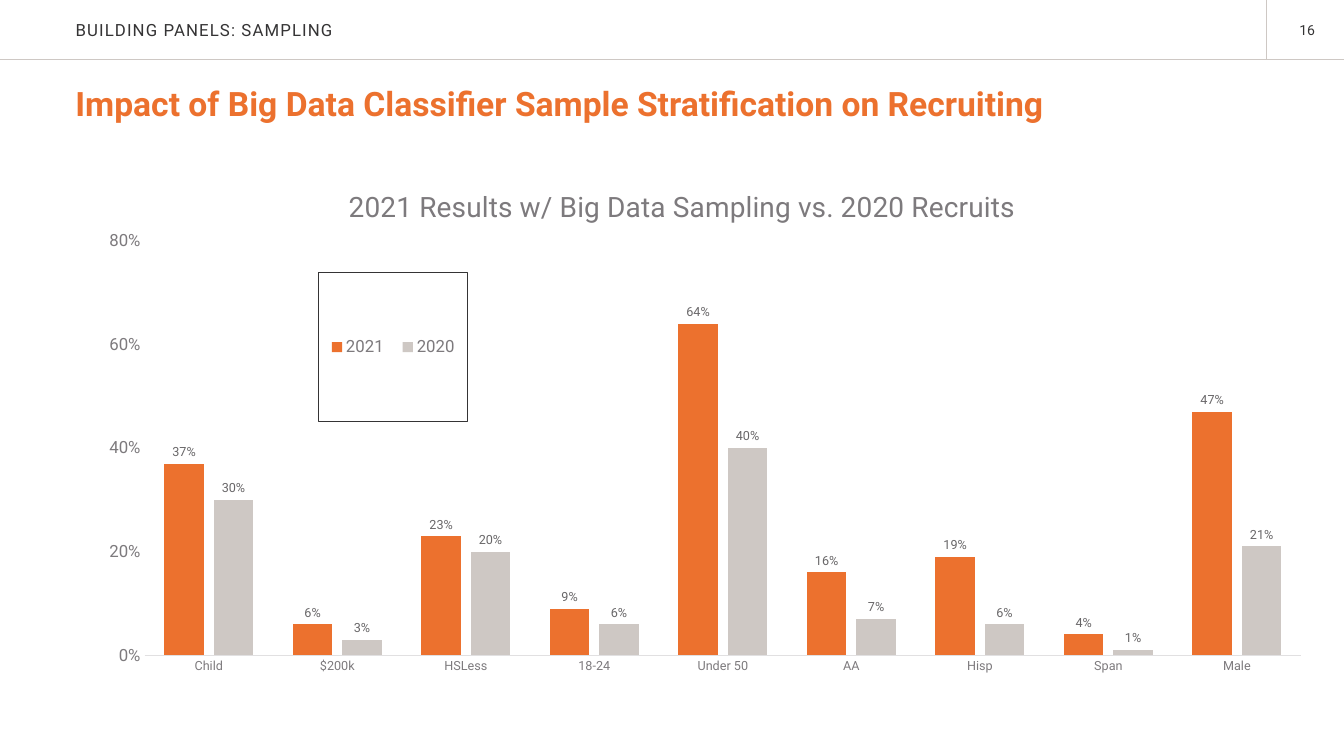
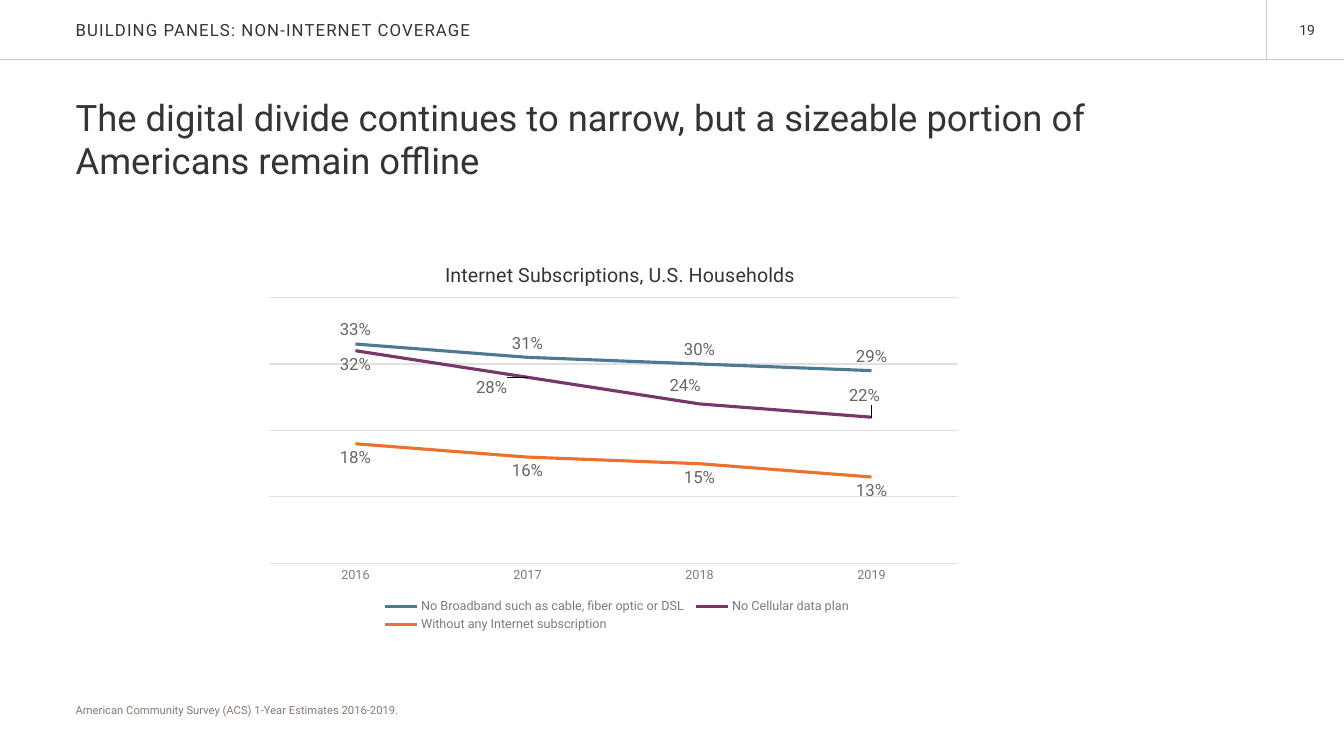
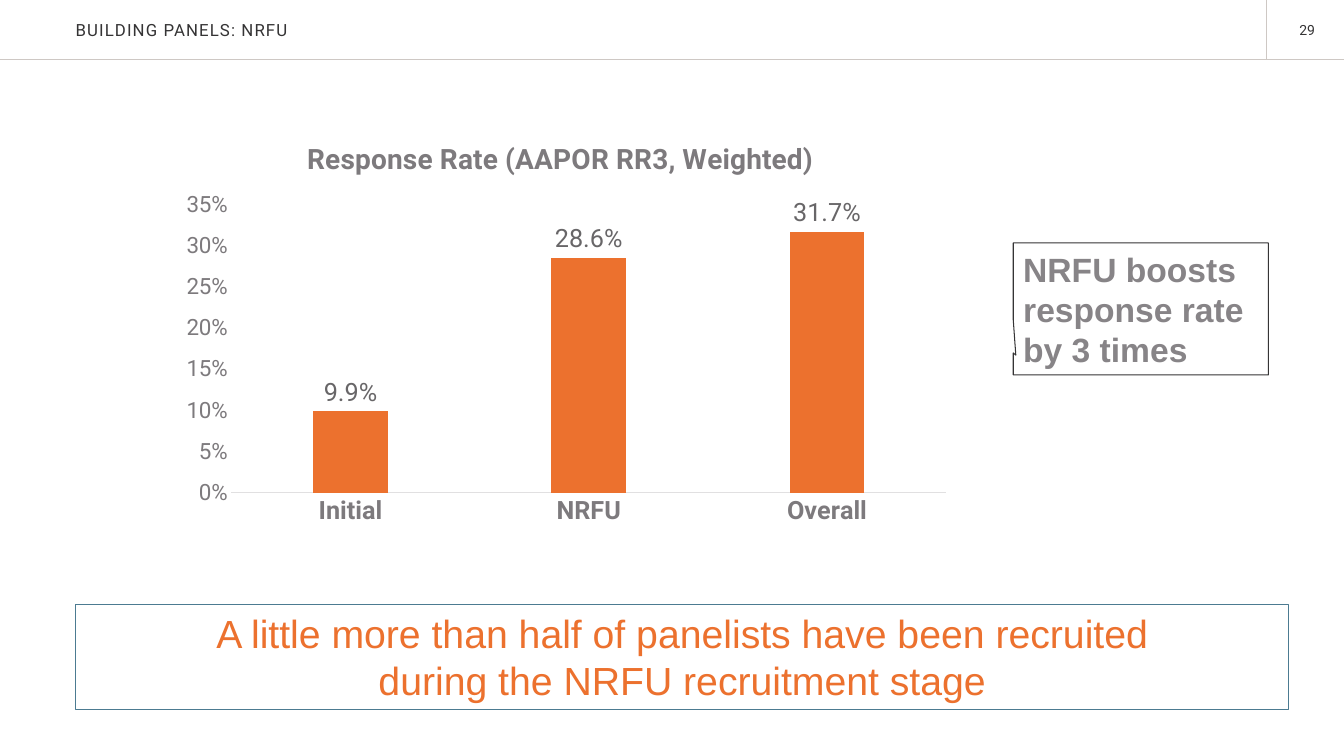
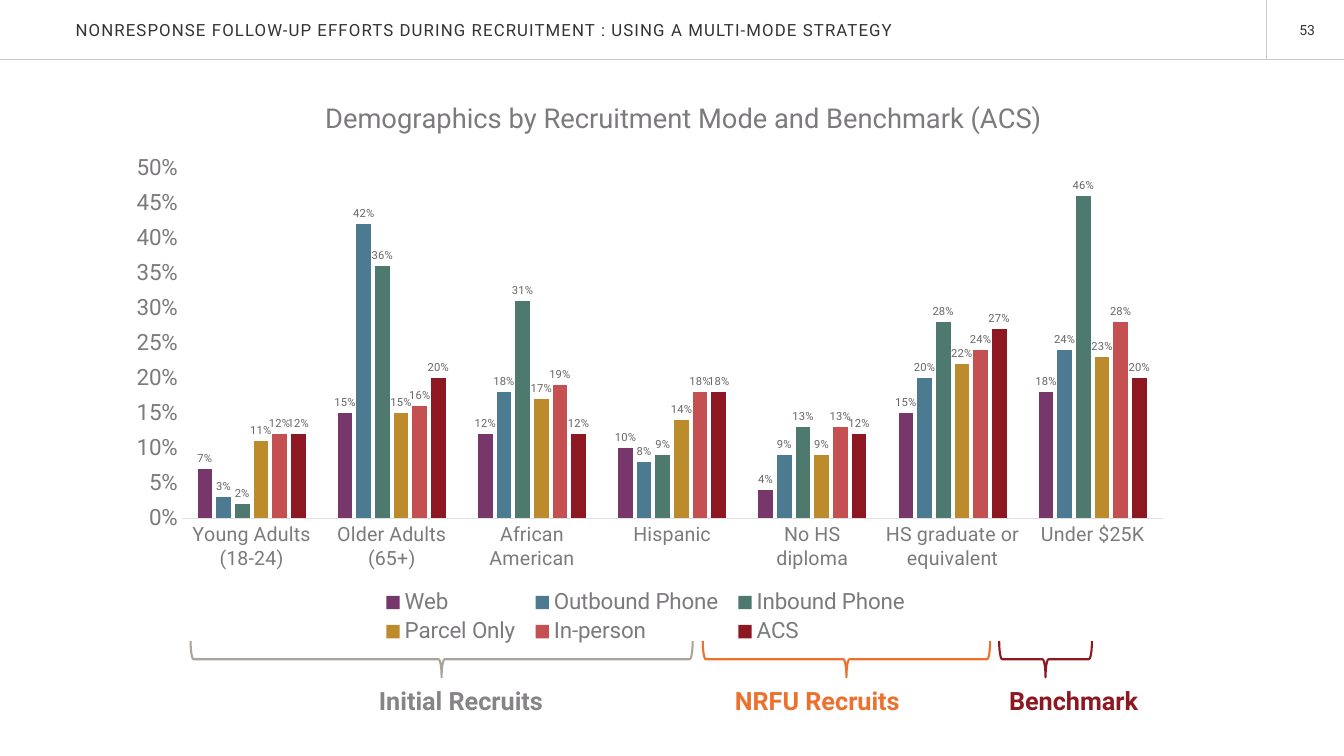
from lxml import etree
from pptx import Presentation
from pptx.chart.data import CategoryChartData
from pptx.dml.color import RGBColor
from pptx.enum.chart import XL_CHART_TYPE, XL_LABEL_POSITION, XL_LEGEND_POSITION, XL_TICK_MARK
from pptx.enum.shapes import MSO_CONNECTOR, MSO_SHAPE
from pptx.enum.text import MSO_ANCHOR, PP_ALIGN
from pptx.oxml import parse_xml
from pptx.oxml.ns import nsdecls, qn
from pptx.util import Inches, Pt

INK = RGBColor(0x35, 0x34, 0x35)
GRAY = RGBColor(0x7D, 0x7A, 0x7D)
SMOKE = RGBColor(0x87, 0x84, 0x87)
LABEL = RGBColor(0x68, 0x66, 0x68)
NOTE = RGBColor(0x87, 0x79, 0x71)
RULE = RGBColor(0xCE, 0xC8, 0xC4)
GRID = RGBColor(0xE1, 0xE0, 0xE1)
STONE = RGBColor(0xAD, 0xA3, 0x9D)
WHITE = RGBColor(0xFF, 0xFF, 0xFF)
ORANGE = RGBColor(0xEC, 0x71, 0x2E)
BLUE = RGBColor(0x4C, 0x7B, 0x91)
PLUM = RGBColor(0x77, 0x37, 0x6B)
GREEN = RGBColor(0x4D, 0x79, 0x6E)
GOLD = RGBColor(0xBC, 0x8C, 0x2C)
CORAL = RGBColor(0xC5, 0x50, 0x51)
WINE = RGBColor(0x8D, 0x18, 0x21)

BARS = XL_CHART_TYPE.COLUMN_CLUSTERED
LINES = XL_CHART_TYPE.LINE
ABOVE = XL_LABEL_POSITION.ABOVE
BELOW = XL_LABEL_POSITION.BELOW
OUTER = XL_LABEL_POSITION.OUTSIDE_END
BOTTOM = XL_LEGEND_POSITION.BOTTOM
RIGHT = XL_LEGEND_POSITION.RIGHT
NO_TICK = XL_TICK_MARK.NONE
STRAIGHT = MSO_CONNECTOR.STRAIGHT
RECT = MSO_SHAPE.RECTANGLE
CALLOUT = MSO_SHAPE.RECTANGULAR_CALLOUT
BRACE = MSO_SHAPE.LEFT_BRACE
TOP = MSO_ANCHOR.TOP
MIDDLE = MSO_ANCHOR.MIDDLE
LOW = MSO_ANCHOR.BOTTOM
LEFT = PP_ALIGN.LEFT
CENTER = PP_ALIGN.CENTER
END = PP_ALIGN.RIGHT
FONT = "Roboto"


def style(font, size, color, bold=False, face=FONT):
    font.size = Pt(size)
    font.color.rgb = color
    font.bold = bold
    font.name = face


def write(shape, text, size=12, color=INK, bold=False, face=FONT, align=LEFT,
          anchor=TOP, flush=False, track=0):
    frame = shape.text_frame
    frame.word_wrap = True
    frame.vertical_anchor = anchor
    if flush:
        frame.margin_left = frame.margin_right = 0
        frame.margin_top = frame.margin_bottom = 0
    for num, line in enumerate(text.split("\n")):
        para = frame.add_paragraph() if num else frame.paragraphs[0]
        para.alignment = align
        run = para.add_run()
        run.text = line
        style(run.font, size, color, bold, face)
        if track:
            run.font._element.set("spc", str(track))


def label(slide, box, text, **form):
    write(slide.shapes.add_textbox(*map(Inches, box)), text, **form)


def panel(slide, kind, box, edge, width, fill=None):
    shape = slide.shapes.add_shape(kind, *map(Inches, box))
    shape.shadow.inherit = False
    if fill is None:
        shape.fill.background()
    else:
        shape.fill.solid()
        shape.fill.fore_color.rgb = fill
    shape.line.color.rgb = edge
    shape.line.width = Pt(width)
    return shape


def rule(slide, *ends):
    line = slide.shapes.add_connector(STRAIGHT, *map(Inches, ends))
    line.line.color.rgb = RULE
    line.line.width = Pt(0.65)
    etree.SubElement(line._element.spPr, qn("a:effectLst"))


def start(deck, head, page):
    slide = deck.slides.add_slide(deck.slide_layouts[6])
    label(slide, (12.64, 0.16, 0.5, 0.27), page, size=10, align=END)
    rule(slide, 0, 0.59, 13.33, 0.59)
    rule(slide, 12.56, 0, 12.56, 0.59)
    label(slide, (0.75, 0, 9.3, 0.6), head, anchor=MIDDLE, flush=True, track=80)
    return slide


def place(node, index, x, y, w=None, h=None, inner=False, shift=False):
    for old in node.findall(qn("c:layout")):
        node.remove(old)
    parts = [("layoutTarget", "inner")] if inner else []
    if not shift:
        parts += [("xMode", "edge"), ("yMode", "edge")]
    parts += [("x", x), ("y", y)]
    if w is not None:
        parts += [("w", w), ("h", h)]
    layout = etree.Element(qn("c:layout"))
    manual = etree.SubElement(layout, qn("c:manualLayout"))
    for tag, val in parts:
        etree.SubElement(manual, qn("c:" + tag)).set("val", str(val))
    node.insert(index, layout)


def title(chart, text, size, color, spot, bold=False):
    chart.has_title = True
    head = chart.chart_title
    head.include_in_layout = False
    run = head.text_frame.paragraphs[0].add_run()
    run.text = text
    style(run.font, size, color, bold)
    place(head._element, 1, *spot)


def legend(chart, side, size, spot, edge=None):
    chart.has_legend = True
    key = chart.legend
    key.position = side
    key.include_in_layout = False
    style(key.font, size, GRAY)
    node = key._element
    place(node, 1, *spot)
    if edge:
        frame = parse_xml(
            f'<c:spPr {nsdecls("c", "a")}><a:ln w="9525"><a:solidFill>'
            f'<a:srgbClr val="{edge}"/></a:solidFill></a:ln></c:spPr>')
        node.find(qn("c:txPr")).addprevious(frame)


def tag(owner, size, form, spot):
    tags = owner.data_labels
    tags.show_value = True
    tags.number_format = form
    tags.number_format_is_linked = False
    tags.position = spot
    style(tags.font, size, LABEL)


def graph(slide, kind, box, cats, rows, plot, top, step, cat_size, tag_size,
          val_size=12, form="0%", bold=False, gap=219, lap=-27):
    data = CategoryChartData(number_format=form)
    data.categories = cats
    for name, _, vals in rows:
        data.add_series(name, vals)
    chart = slide.shapes.add_chart(kind, *map(Inches, box), data).chart
    style(chart.font, 10, INK)
    chart.has_legend = False
    place(chart._element.find(qn("c:chart")).find(qn("c:plotArea")), 0, *plot, inner=True)

    cat = chart.category_axis
    cat.major_tick_mark = NO_TICK
    cat.format.line.color.rgb = GRID
    cat.format.line.width = Pt(0.75)
    style(cat.tick_labels.font, cat_size, GRAY, bold)

    val = chart.value_axis
    val.minimum_scale = 0
    val.maximum_scale = top
    val.major_unit = step
    val.major_tick_mark = NO_TICK
    val.has_major_gridlines = kind == LINES
    if kind == LINES:
        val.visible = False
        val.major_gridlines.format.line.color.rgb = GRID
        val.major_gridlines.format.line.width = Pt(0.75)
    else:
        val.format.line.fill.background()
        val.tick_labels.number_format = "0%"
        val.tick_labels.number_format_is_linked = False
        style(val.tick_labels.font, val_size, GRAY)

    group = chart.plots[0]
    group.vary_by_categories = False
    if kind == BARS:
        group.gap_width = gap
        group.overlap = lap
    for num, (row, (_, color, _)) in enumerate(zip(group.series, rows)):
        if kind == LINES:
            row.smooth = False
            row.format.line.color.rgb = color
            row.format.line.width = Pt(2.25)
            spot = BELOW if num else ABOVE
        else:
            row.format.fill.solid()
            row.format.fill.fore_color.rgb = color
            spot = OUTER
        tag(row, tag_size, form, spot)
    return chart


def nudge(row, index, spot, x, y):
    mark = row.points[index].data_label
    style(mark.font, 12, LABEL)
    mark.position = spot
    place(mark._dLbl, 1, x, y, shift=True)


def brace(slide, left, width, color):
    depth = 0.36
    mid = left + width / 2
    box = (mid - depth / 2, 6.54 - width / 2, depth, width)
    panel(slide, BRACE, box, color, 1.5).rotation = 270


def impact(deck):
    slide = start(deck, "BUILDING PANELS: SAMPLING", "16")
    label(slide, (0.65, 0.77, 11.01, 0.6),
          "Impact of Big Data Classifier Sample Stratification on Recruiting",
          size=24, color=ORANGE, bold=True)
    cats = ["Child", "$200k", "HSLess", "18-24", "Under 50", "AA", "Hisp", "Span", "Male"]
    rows = [
        ("2021", ORANGE, [0.37, 0.06, 0.23, 0.09, 0.64, 0.16, 0.19, 0.04, 0.47]),
        ("2020", RULE, [0.3, 0.03, 0.2, 0.06, 0.4, 0.07, 0.06, 0.01, 0.21]),
    ]
    chart = graph(slide, BARS, (0.57, 1.6, 12.34, 5.27), cats, rows,
                  (0.07, 0.15, 0.93, 0.78), 0.8, 0.2, 9, 9, gap=100, lap=-25)
    title(chart, "2021 Results w/ Big Data Sampling vs. 2020 Recruits", 20, GRAY, (0.23, 0.04))
    legend(chart, RIGHT, 12, (0.21, 0.21, 0.12, 0.28), INK)


def divide(deck):
    slide = start(deck, "BUILDING PANELS: NON-INTERNET COVERAGE", "19")
    label(slide, (0.75, 0.94, 10.7, 1),
          "The digital divide continues to narrow, but a sizeable portion of "
          "Americans remain offline", size=26, flush=True)
    label(slide, (0.75, 6.79, 10.67, 0.32),
          "American Community Survey (ACS) 1-Year Estimates 2016-2019.",
          size=8, color=NOTE, anchor=LOW, flush=True)
    rows = [
        ("No Broadband such as cable, fiber optic or DSL", BLUE, [0.33, 0.31, 0.3, 0.29]),
        ("No Cellular data plan", PLUM, [0.32, 0.28, 0.24, 0.22]),
        ("Without any Internet subscription", ORANGE, [0.18, 0.16, 0.15, 0.13]),
    ]
    chart = graph(slide, LINES, (2.53, 2.4, 7.11, 3.94), ["2016", "2017", "2018", "2019"],
                  rows, (0.02, 0.14, 0.96, 0.67), 0.4, 0.1, 9, 12)
    title(chart, "Internet Subscriptions, U.S. Households", 14, INK, (0.26, 0.04))
    legend(chart, BOTTOM, 9, (0.17, 0.89, 0.67, 0.1))
    cell = chart.plots[0].series[1]
    nudge(cell, 1, BELOW, -0.05, -0.01)
    nudge(cell, 2, ABOVE, -0.02, -0.01)
    nudge(cell, 3, ABOVE, -0.01, -0.02)


def boost(deck):
    slide = start(deck, "BUILDING PANELS: NRFU", "29")
    box = panel(slide, RECT, (0.75, 6, 12.03, 1.04), BLUE, 1, WHITE)
    write(box, "A little more than half of panelists have been recruited\n"
          "during the NRFU recruitment stage",
          size=28, color=ORANGE, face="Arial", align=CENTER)
    note = panel(slide, CALLOUT, (10.05, 2.41, 2.53, 1.31), INK, 0.75)
    note.adjustments[0] = -0.49
    note.adjustments[1] = 0.35
    write(note, "NRFU boosts response rate\nby 3 times", size=24, color=SMOKE,
          bold=True, face="Arial", anchor=MIDDLE)
    name = "Response Rate (AAPOR RR3, Weighted)"
    chart = graph(slide, BARS, (1.75, 1.26, 7.79, 4.08), ["Initial", "NRFU", "Overall"],
                  [(name, ORANGE, [0.099, 0.286, 0.317])], (0.07, 0.19, 0.91, 0.7),
                  0.35, 0.05, 18, 18, val_size=16, form="0.0%", bold=True)
    title(chart, name, 20, GRAY, (0.16, 0.02), bold=True)


def modes(deck):
    slide = start(deck, "NONRESPONSE FOLLOW-UP EFFORTS DURING RECRUITMENT : "
                  "USING A MULTI-MODE STRATEGY", "53")
    cats = ["Young Adults (18-24)", "Older Adults (65+)", "African American", "Hispanic",
            "No HS diploma", "HS graduate or equivalent", "Under $25K"]
    rows = [
        ("Web", PLUM, [0.07, 0.15, 0.12, 0.1, 0.04, 0.15, 0.18]),
        ("Outbound Phone", BLUE, [0.03, 0.42, 0.18, 0.08, 0.09, 0.2, 0.24]),
        ("Inbound Phone", GREEN, [0.02, 0.36, 0.31, 0.09, 0.13, 0.28, 0.46]),
        ("Parcel Only", GOLD, [0.11, 0.15, 0.17, 0.14, 0.09, 0.22, 0.23]),
        ("In-person", CORAL, [0.12, 0.16, 0.19, 0.18, 0.13, 0.24, 0.28]),
        ("ACS", WINE, [0.12, 0.2, 0.12, 0.18, 0.12, 0.27, 0.2]),
    ]
    chart = graph(slide, BARS, (1.06, 0.83, 10.58, 5.6), cats, rows,
                  (0.07, 0.15, 0.92, 0.62), 0.5, 0.05, 14, 8, val_size=16)
    title(chart, "Demographics by Recruitment Mode and Benchmark (ACS)", 19.5, GRAY,
          (0.2, 0.02))
    legend(chart, BOTTOM, 16, (0.25, 0.89, 0.51, 0.11))
    for text, left, width, spot, edge, color in [
        ("Initial Recruits", 1.89, 4.98, 3.66, STONE, SMOKE),
        ("NRFU Recruits", 6.97, 2.85, 7.19, ORANGE, ORANGE),
        ("Benchmark", 9.91, 0.92, 9.91, WINE, WINE),
    ]:
        brace(slide, left, width, edge)
        label(slide, (spot, 6.75, 2.17, 0.4), text, size=18, color=color, bold=True)


def main():
    deck = Presentation()
    deck.slide_width = Inches(13.33)
    deck.slide_height = Inches(7.5)
    for build in (impact, divide, boost, modes):
        build(deck)
    deck.save("out.pptx")


if __name__ == "__main__":
    main()
